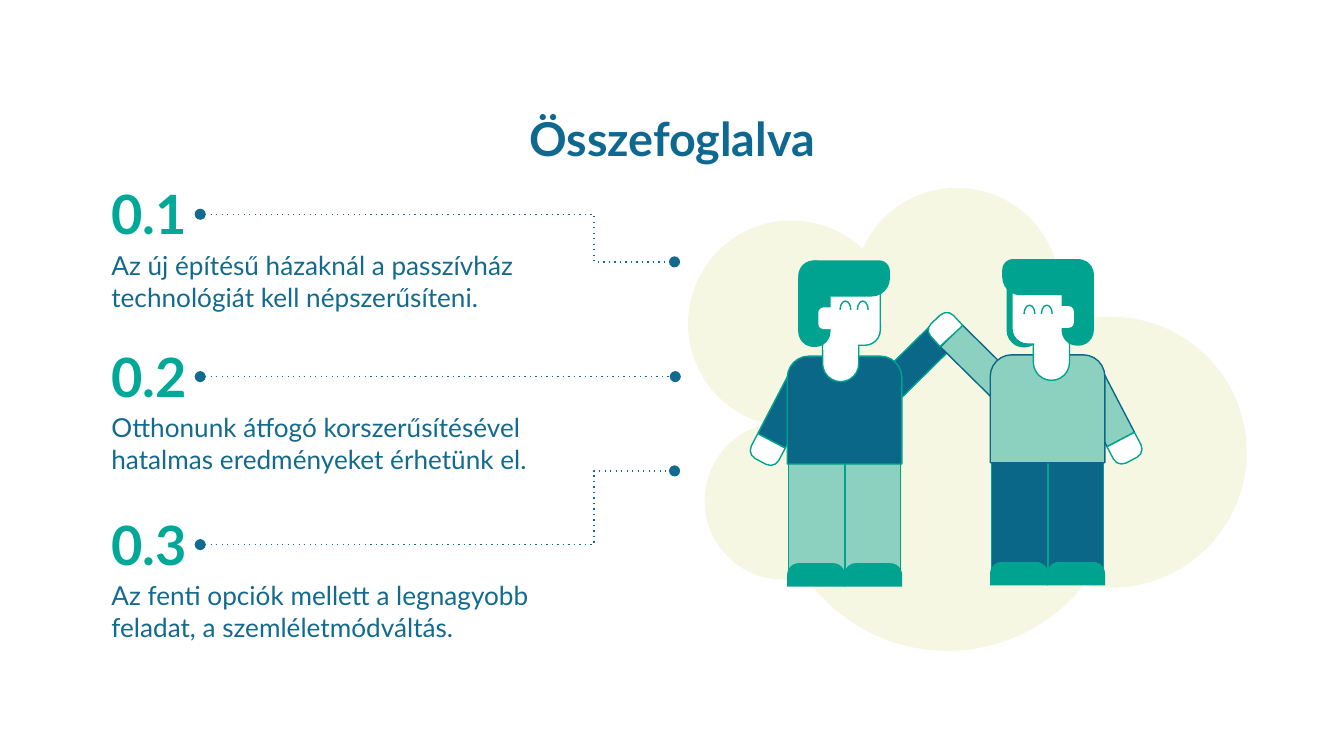
from collections import namedtuple
from math import atan2, degrees, hypot

from lxml import etree
from pptx import Presentation
from pptx.dml.color import RGBColor
from pptx.enum.shapes import MSO_CONNECTOR, MSO_SHAPE
from pptx.enum.text import MSO_ANCHOR, PP_ALIGN
from pptx.oxml.ns import qn
from pptx.util import Pt

ELBOW, OVAL, ARC = MSO_CONNECTOR.ELBOW, MSO_SHAPE.OVAL, MSO_SHAPE.ARC
BOX, ROUND_BOX = MSO_SHAPE.RECTANGLE, MSO_SHAPE.ROUNDED_RECTANGLE
ROUND_ENDS = MSO_SHAPE.ROUND_2_SAME_RECTANGLE      # radii: top pair, bottom pair
ROUND_DIAGONAL = MSO_SHAPE.ROUND_2_DIAG_RECTANGLE  # radii: one diagonal, the other
MIDDLE, CENTER, LEFT = MSO_ANCHOR.MIDDLE, PP_ALIGN.CENTER, PP_ALIGN.LEFT

TITLE_BLUE = RGBColor(0x0F, 0x68, 0x90)
TEXT_BLUE = RGBColor(0x12, 0x6B, 0x8F)
NUMBER_GREEN = RGBColor(0x00, 0xA9, 0x97)
CREAM = RGBColor(0xF6, 0xF7, 0xE3)
GREEN = RGBColor(0x00, 0xA2, 0x90)
NAVY = RGBColor(0x0A, 0x67, 0x87)
MINT = RGBColor(0x8C, 0xD0, 0xBF)
WHITE = RGBColor(0xFF, 0xFF, 0xFF)
FONT = "Lato"

TITLE = "Összefoglalva"
Point = namedtuple("Point", "number text top width line_end bend")
POINTS = [
    Point("0.1", "Az új építésű házaknál a passzívház technológiát kell népszerűsíteni.",
          93.2, 225.4, (361.4, 140.3), 0.83),
    Point("0.2", "Otthonunk átfogó korszerűsítésével hatalmas eredményeket érhetünk el.",
          180.2, 239.8, (361.8, 201.8), 0.5),
    Point("0.3", "Az fenti opciók mellett a legnagyobb feladat, a szemléletmódváltás.",
          270.2, 239.8, (361.4, 252.3), 0.83),
]
# Cloud circles: left, top, diameter
CLOUD = [(368.6, 118.1, 110.7), (377.5, 226.1, 84.5), (457.2, 100.6, 110.7),
         (522.7, 169.7, 145.2), (414.7, 162.9, 185.8)]

# A person stands on a vertical axis; facing is 1 (right) or -1 (left, mirrored)
Person = namedtuple("Person", "axis top facing shirt shirt_line trousers eye_top back_hair")
PEOPLE = [
    Person(452.5, 139.5, 1, NAVY, GREEN, MINT, 21.8, False),
    Person(561.2, 138.8, -1, MINT, NAVY, NAVY, 24.7, True),
]
# Arms: shoulder, wrist and fingertips, each from the axis and the top of the hair
ARMS = [((-20.5, 60.7), (-39.2, 96.7), (-45, 107.7)),
        ((21.6, 70.7), (51.5, 41.2), (59.8, 32.2))]
ARM_WIDTH = 16.6

# Body parts: distance of the centre from the axis, top, size, colours, corner radii
Part = namedtuple("Part", "preset offset top width height fill line radii",
                  defaults=(None, ()))


def body_parts(person):
    """List the parts of one person from back to front."""
    legs = [Part(BOX, side * 15.1, 97.4, 29.9, 75.9, person.trousers, GREEN)
            for side in (-1, 1)]
    shoes = [Part(ROUND_ENDS, side * 15.3, 162.2, 31, 12.6, GREEN, None, (0.5, 0))
             for side in (-1, 1)]
    eyes = [Part(ARC, offset, person.eye_top, 5.8, 9.4, None, GREEN, (108, 0))
            for offset in (0.4, 9.7)]
    torso = Part(ROUND_ENDS, 0, 51.3, 61.4, 57.8, person.shirt, person.shirt_line, (0.2, 0))
    neck = Part(ROUND_ENDS, -2.1, 40, 19.4, 25, WHITE, GREEN, (0, 0.5))
    face = Part(ROUND_BOX, 0.4, 8.1, 37.4, 37.4, WHITE, GREEN, (0.22,))
    throat = Part(BOX, -2.1, 38, 18.6, 10, WHITE)  # hides the line between face and neck
    side_hair = Part(ROUND_BOX, -16.2, 0, 17.3, 46.4, GREEN, None, (0.48,))
    ear = Part(ROUND_BOX, -8.6, 25.2, 11, 11.6, WHITE, None, (0.25,))
    fringe = Part(ROUND_DIAGONAL, -0.3, 0, 49.1, 19.4, GREEN, None, (0.5, 0.3))
    back_hair = Part(ROUND_ENDS, 12.6, 10, 18.8, 37.4, GREEN, None, (0, 0.5))
    behind = [back_hair] if person.back_hair else []
    return (legs + shoes + behind
            + [torso, neck, face, throat, side_hair, ear, fringe] + eyes)


def style_shape(shape, fill, line=None):
    shape.shadow.inherit = False
    if fill is None:
        shape.fill.background()
    else:
        shape.fill.solid()
        shape.fill.fore_color.rgb = fill
    if line is None:
        shape.line.fill.background()
    else:
        shape.line.color.rgb, shape.line.width = line, Pt(0.75)


def add_part(group, person, part):
    """Place a part beside the axis, mirrored when the person faces left."""
    left = person.axis + person.facing * part.offset - part.width / 2
    shape = group.shapes.add_shape(part.preset, Pt(left), Pt(person.top + part.top),
                                   Pt(part.width), Pt(part.height))
    radii = part.radii
    if part.preset == ROUND_DIAGONAL and person.facing < 0:
        radii = radii[::-1]
    for index, radius in enumerate(radii):
        shape.adjustments[index] = radius
    style_shape(shape, part.fill, part.line)
    return shape


def add_limb(group, person, start, end, fill, line, radius):
    """Lay a bar from start to end; its rounded corners are at the end."""
    (x1, y1), (x2, y2) = start, end
    length = hypot(x2 - x1, y2 - y1)
    bar = Part(ROUND_ENDS, (x1 + x2) / 2, (y1 + y2 - length) / 2,
               ARM_WIDTH, length, fill, line, (radius, 0))
    shape = add_part(group, person, bar)
    shape.rotation = degrees(atan2(person.facing * (x2 - x1), y1 - y2)) % 360


def add_person(page, person):
    group = page.shapes.add_group_shape()
    for shoulder, wrist, fingertips in ARMS:
        add_limb(group, person, shoulder, wrist, person.shirt, person.shirt_line, 0)
        add_limb(group, person, wrist, fingertips, WHITE, GREEN, 0.4)
    for part in body_parts(person):
        add_part(group, person, part)


def add_text(page, text, left, top, width, height, size, color, bold=False,
             inset=3.6, indent=1.4, align=LEFT):
    box = page.shapes.add_textbox(Pt(left), Pt(top), Pt(width), Pt(height))
    frame = box.text_frame
    frame.word_wrap = True
    frame.margin_top = frame.margin_bottom = frame.margin_right = Pt(inset)
    frame.margin_left = Pt(inset + indent)
    para = frame.paragraphs[0]
    para.text, para.alignment = text, align
    para.font.name, para.font.size, para.font.bold = FONT, Pt(size), bold
    para.font.color.rgb = color
    return frame


def add_dotted_elbow(page, start, end, bend):
    link = page.shapes.add_connector(ELBOW, *map(Pt, start + end))
    link.line.color.rgb, link.line.width = TEXT_BLUE, Pt(0.75)
    properties = link._element.spPr
    guides = properties.find(qn("a:prstGeom")).find(qn("a:avLst"))
    etree.SubElement(guides, qn("a:gd"), name="adj1", fmla=f"val {round(bend * 100000)}")
    line = properties.find(qn("a:ln"))
    etree.SubElement(line, qn("a:prstDash"), val="dot")
    for tag in ("a:headEnd", "a:tailEnd"):
        etree.SubElement(line, qn(tag), type="oval")
    etree.SubElement(properties, qn("a:effectLst"))


def add_point(page, point):
    left, height = 54.7, 43.2
    add_dotted_elbow(page, (107.3, point.top + height / 2), point.line_end, point.bend)
    body = add_text(page, point.text, left, point.top + 36.2, point.width, height,
                    14, TEXT_BLUE)
    body.paragraphs[0].line_spacing = 1.03
    body.paragraphs[0].space_before = Pt(2)
    add_text(page, point.number, left, point.top, 51.8, height, 29, NUMBER_GREEN, True)


def main():
    deck = Presentation()
    deck.slide_width, deck.slide_height = Pt(720), Pt(405)
    page = deck.slides.add_slide(deck.slide_layouts[6])

    # Title
    title = add_text(page, TITLE, 77.8, 55.4, 564.5, 36.7, 25, TITLE_BLUE, True,
                     inset=0, indent=0, align=CENTER)
    title.vertical_anchor = MIDDLE

    # Cloud behind the people
    cloud = page.shapes.add_group_shape()
    for left, top, diameter in CLOUD:
        circle = cloud.shapes.add_shape(OVAL, Pt(left), Pt(top), Pt(diameter), Pt(diameter))
        style_shape(circle, CREAM)

    # Numbered points with their dotted lines
    for point in POINTS:
        add_point(page, point)

    # Two people joining hands
    for person in PEOPLE:
        add_person(page, person)

    deck.save("out.pptx")


if __name__ == "__main__":
    main()
